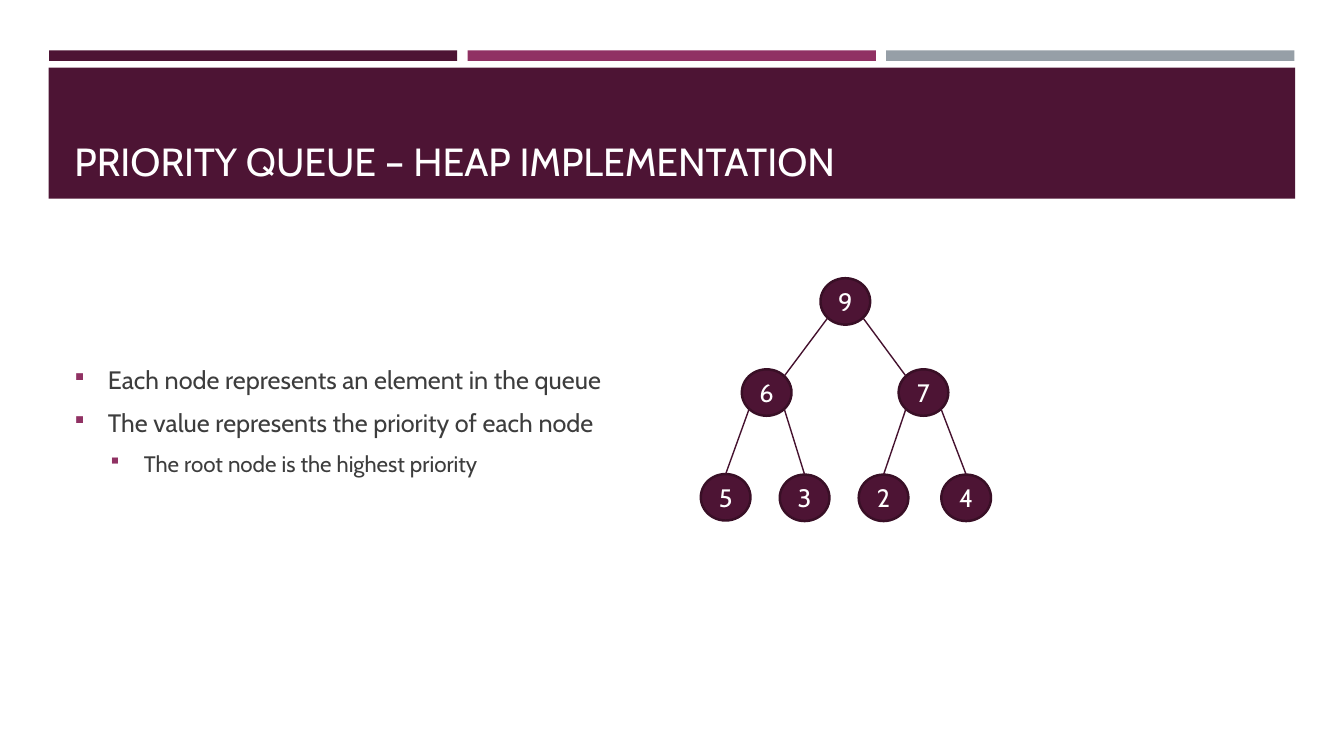
"""Build the slide on the heap implementation of a priority queue."""
from dataclasses import dataclass
from math import sqrt

from lxml.etree import SubElement
from pptx import Presentation
from pptx.dml.color import RGBColor
from pptx.enum.shapes import MSO_CONNECTOR, MSO_SHAPE
from pptx.enum.text import MSO_ANCHOR, PP_ALIGN
from pptx.oxml.ns import qn
from pptx.util import Pt


@dataclass(frozen=True)
class Theme:
    """Colours, font and type sizes of the slide."""

    plum: str = "4D1434"
    magenta: str = "903163"
    grey: str = "969FA7"
    node_edge: str = "390F26"
    branch: str = "45122F"
    body: str = "3D3D3D"
    white: str = "FFFFFF"
    font: str = "Cabin"
    title_size: float = 28
    body_size: float = 18
    detail_size: float = 16


class SlideBuilder:
    """Draw styled elements on one slide."""

    def __init__(self, slide, theme):
        """Keep the slide and its theme."""
        self.slide = slide
        self.theme = theme

    def styled_run(self, paragraph, text, size, color):
        """Add one styled run to a paragraph."""
        run = paragraph.add_run()
        run.text = text
        run.font.name = self.theme.font
        run.font.size = Pt(size)
        run.font.color.rgb = RGBColor.from_string(color)

    def block(self, preset, left, top, width, height, fill):
        """Add a filled preset shape without outline or shadow."""
        block = self.slide.shapes.add_shape(
            preset, Pt(left), Pt(top), Pt(width), Pt(height))
        block.shadow.inherit = False
        block.fill.solid()
        block.fill.fore_color.rgb = RGBColor.from_string(fill)
        block.line.fill.background()
        return block

    def title(self, text, left, top, width, height):
        """Place the title in front of what is drawn so far."""
        title = self.slide.shapes.title
        title.left, title.top = Pt(left), Pt(top)
        title.width, title.height = Pt(width), Pt(height)
        title.element.getparent().append(title.element)
        frame = title.text_frame
        frame.word_wrap = True
        frame.vertical_anchor = MSO_ANCHOR.BOTTOM
        heading = frame.paragraphs[0]
        heading.alignment = PP_ALIGN.LEFT
        self.styled_run(heading, text, self.theme.title_size, self.theme.white)

    def bullets(self, points, left, top, width, height):
        """Add a list of (level, text) points with square bullets."""
        frame = self.slide.shapes.add_textbox(
            Pt(left), Pt(top), Pt(width), Pt(height)).text_frame
        frame.word_wrap = True
        frame.vertical_anchor = MSO_ANCHOR.MIDDLE
        for index, (level, text) in enumerate(points):
            point = frame.add_paragraph() if index else frame.paragraphs[0]
            point.level = level
            point.space_before, point.space_after = Pt(3), Pt(6)
            properties = point._p.get_or_add_pPr()
            properties.set("marL", str(Pt(24 + 25.7 * level)))
            properties.set("indent", str(-Pt(24)))
            tint = SubElement(properties, qn("a:buClr"))
            SubElement(tint, qn("a:srgbClr"), val=self.theme.magenta)
            SubElement(properties, qn("a:buSzPct"), val="92000")
            SubElement(properties, qn("a:buFont"), typeface="Wingdings")
            SubElement(properties, qn("a:buChar"), char="§")
            size = self.theme.detail_size if level else self.theme.body_size
            self.styled_run(point, text, size, self.theme.body)

    def node(self, value, left, top, width, height):
        """Add a heap node with its value."""
        node = self.block(MSO_SHAPE.OVAL, left, top, width, height, self.theme.plum)
        node.line.color.rgb = RGBColor.from_string(self.theme.node_edge)
        node.line.width = Pt(1.75)
        frame = node.text_frame
        frame.margin_left = frame.margin_right = 0
        frame.margin_top = frame.margin_bottom = 0
        frame.vertical_anchor = MSO_ANCHOR.MIDDLE
        label = frame.paragraphs[0]
        label.alignment = PP_ALIGN.CENTER
        self.styled_run(label, value, self.theme.body_size, self.theme.white)
        return node

    def branch(self, parent, child, side, at_top):
        """Join a parent's lower diagonal to its child; side is -1 or 1."""

        def diagonal(node, across, down):
            """Return the point on a node's outline at 45 degrees."""
            return (int(node.left + node.width / 2 * (1 + across / sqrt(2))),
                    int(node.top + node.height / 2 * (1 + down / sqrt(2))))

        line = self.slide.shapes.add_connector(
            MSO_CONNECTOR.STRAIGHT,
            *diagonal(parent, side, 1), *diagonal(child, -side, -1))
        if at_top:
            line.end_connect(child, 0)
        line.line.color.rgb = RGBColor.from_string(self.theme.branch)
        line.line.width = Pt(1)
        SubElement(line._element.spPr, qn("a:effectLst"))


def main():
    """Compose and save the slide."""
    theme = Theme()
    deck = Presentation()
    deck.slide_width, deck.slide_height = Pt(960), Pt(540)
    builder = SlideBuilder(deck.slides.add_slide(deck.slide_layouts[5]), theme)

    for column, color in enumerate((theme.plum, theme.magenta, theme.grey)):
        builder.block(MSO_SHAPE.RECTANGLE, 35 + 299 * column, 36, 291.6, 7.5, color)
    builder.block(MSO_SHAPE.RECTANGLE, 34.8, 48.4, 890.4, 93.6, theme.plum)
    builder.title("PRIORITY QUEUE – HEAP IMPLEMENTATION", 46, 55.5, 868, 80)

    builder.bullets([
        (0, "Each node represents an element in the queue"),
        (0, "The value represents the priority of each node"),
        (1, "The root node is the highest priority"),
    ], 46, 171.4, 868, 258.6)

    heap = [
        ("9", 586.1, 198.7),
        ("6", 529.9, 263.8), ("7", 641.9, 263.8),
        ("5", 500.6, 338.6), ("3", 557, 339), ("2", 613.4, 339), ("4", 672.4, 339),
    ]
    nodes = [builder.node(value, left, top, 35.5, 33.2) for value, left, top in heap]
    for index in range(1, len(nodes)):
        side = -1 if index % 2 else 1
        builder.branch(nodes[(index - 1) // 2], nodes[index], side, at_top=index > 2)

    deck.save("out.pptx")


if __name__ == "__main__":
    main()
